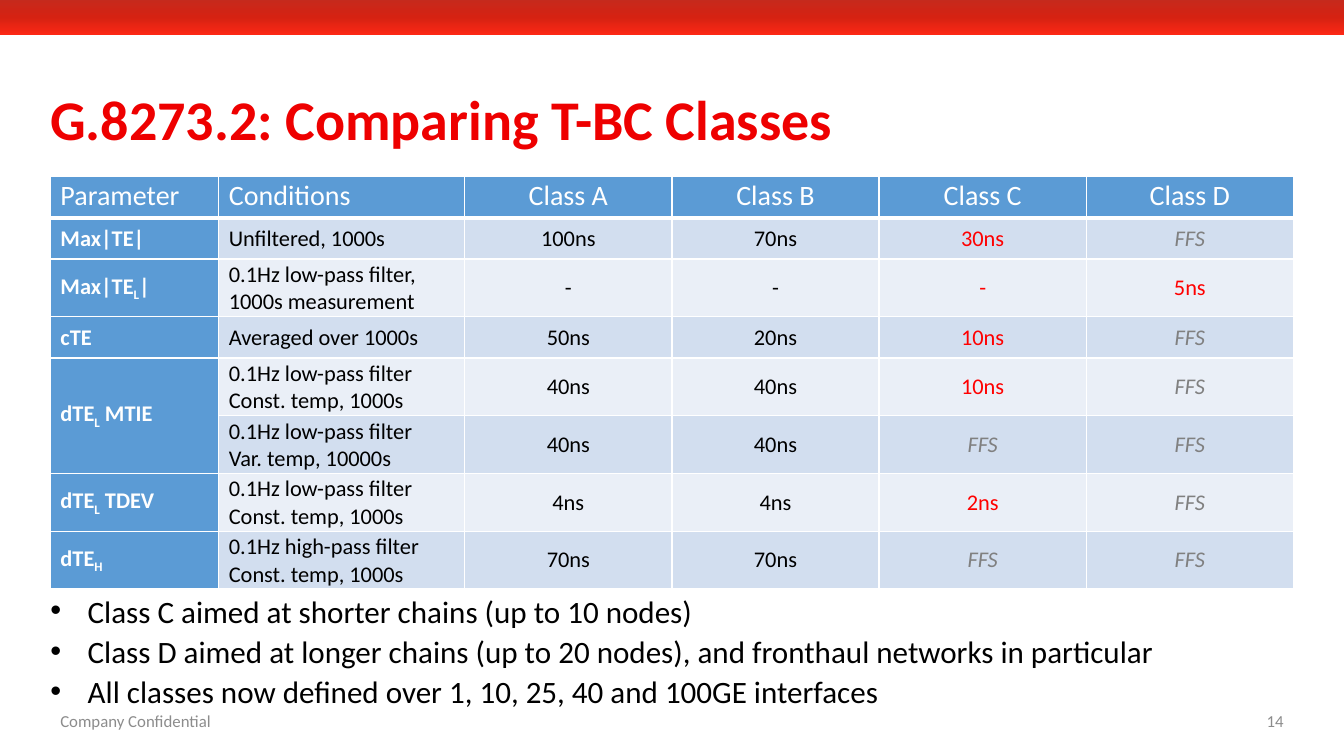
from pptx import Presentation
from pptx.dml.color import RGBColor
from pptx.enum.shapes import MSO_SHAPE
from pptx.enum.text import MSO_ANCHOR, PP_ALIGN
from pptx.oxml import parse_xml
from pptx.oxml.ns import nsdecls
from pptx.util import Inches, Pt

COLORS = {
    "title": "EE0000", "black": "000000", "white": "FFFFFF", "footer": "8C8C8C",
    "new": "FF0000", "pending": "808080", "header": "5B9BD5",
    "band_dark": "D2DEEF", "band_light": "EAEFF7",
    "bar_top": "C52A1D", "bar_middle": "D52212", "bar_bottom": "FD2815",
}
HEADINGS = ["Parameter", "Conditions", "Class A", "Class B", "Class C", "Class D"]
# Underscores enclose a subscript; None continues the parameter above.
LIMITS = [
    ["Max|TE|", "Unfiltered, 1000s", "100ns", "70ns", "30ns", "FFS"],
    ["Max|TE_L_|", "0.1Hz low-pass filter, 1000s measurement", "-", "-", "-", "5ns"],
    ["cTE", "Averaged over 1000s", "50ns", "20ns", "10ns", "FFS"],
    ["dTE_L_ MTIE", "0.1Hz low-pass filter\nConst. temp, 1000s", "40ns", "40ns", "10ns", "FFS"],
    [None, "0.1Hz low-pass filter\nVar. temp, 10000s", "40ns", "40ns", "FFS", "FFS"],
    ["dTE_L_ TDEV", "0.1Hz low-pass filter\nConst. temp, 1000s", "4ns", "4ns", "2ns", "FFS"],
    ["dTE_H_", "0.1Hz high-pass filter Const. temp, 1000s", "70ns", "70ns", "FFS", "FFS"],
]
COLUMN_WIDTHS = [1.67, 2.44] + [2.055] * 4
ROW_HEIGHT = 0.41
BULLETS = [
    "Class C aimed at shorter chains (up to 10 nodes)",
    "Class D aimed at longer chains (up to 20 nodes), and fronthaul networks in particular",
    "All classes now defined over 1, 10, 25, 40 and 100GE interfaces",
]


def add_span(para, text, size, color, bold=False, italic=False):
    span = para.add_run()
    span.text = text
    font = span.font
    font.name, font.size = "Calibri", Pt(size)
    font.bold, font.italic = bold, italic
    font.color.rgb = RGBColor.from_string(COLORS[color])
    return span


def add_box(page, left, top, width, height, inset=True, anchor=MSO_ANCHOR.MIDDLE):
    box = page.shapes.add_textbox(Inches(left), Inches(top), Inches(width), Inches(height))
    frame = box.text_frame
    frame.word_wrap = True
    frame.vertical_anchor = anchor
    if not inset:
        frame.margin_left = frame.margin_right = 0
        frame.margin_top = frame.margin_bottom = 0
    return frame


def add_top_bar(page):
    bar = page.shapes.add_shape(
        MSO_SHAPE.RECTANGLE, 0, Inches(-0.01), Inches(13.34), Inches(0.36))
    stops = "".join(
        f'<a:gs pos="{place}"><a:srgbClr val="{COLORS[name]}"/></a:gs>'
        for place, name in [(0, "bar_top"), (50000, "bar_middle"), (100000, "bar_bottom")])
    bar._element.spPr.append(parse_xml(
        f'<a:gradFill {nsdecls("a")} rotWithShape="1"><a:gsLst>{stops}</a:gsLst>'
        '<a:lin ang="5400000" scaled="0"/></a:gradFill>'))
    bar.line.fill.background()
    bar.shadow.inherit = False


def add_title(page, text):
    para = add_box(page, 0.5, 0.91, 9.73, 0.61, inset=False).paragraphs[0]
    para.line_spacing = 0.9
    add_span(para, text, 40, "title", bold=True)


def add_bullets(page, lines):
    frame = add_box(page, 0.5, 5.98, 12.33, 1.12, inset=False, anchor=MSO_ANCHOR.TOP)
    for index, line in enumerate(lines):
        para = frame.add_paragraph() if index else frame.paragraphs[0]
        properties = para._p.get_or_add_pPr()
        properties.set("marL", str(Inches(0.37)))
        properties.set("indent", str(Inches(-0.37)))
        properties.append(parse_xml(f'<a:buFont {nsdecls("a")} typeface="Arial"/>'))
        properties.append(parse_xml(f'<a:buChar {nsdecls("a")} char="•"/>'))
        para.line_spacing = 0.7
        if index:
            para.space_before = Pt(10)
        add_span(para, line, 22.2, "black")


def add_footer(page, left, text, align):
    para = add_box(page, left, 6.95, 3, 0.4).paragraphs[0]
    para.alignment = align
    add_span(para, text, 12, "footer")


def style_cell(cell, fill, bottom_width=1):
    """Set the margins, white borders and fill of a table cell."""
    cell.margin_left = cell.margin_right = Inches(0.1)
    cell.margin_top = cell.margin_bottom = Inches(0.02)
    properties = cell._tc.get_or_add_tcPr()
    for side, width in [("L", 1), ("R", 1), ("T", 1), ("B", bottom_width)]:
        properties.append(parse_xml(
            f'<a:ln{side} {nsdecls("a")} w="{Pt(width)}"><a:solidFill>'
            f'<a:srgbClr val="{COLORS["white"]}"/></a:solidFill></a:ln{side}>'))
    cell.fill.solid()
    cell.fill.fore_color.rgb = RGBColor.from_string(COLORS[fill])


def write_parameter(para, text):
    for index, part in enumerate(text.split("_")):
        if part:
            span = add_span(para, part, 16, "white", bold=True)
            if index % 2:
                span._r.get_or_add_rPr().set("baseline", "-25000")


def write_condition(para, text):
    for index, line in enumerate(text.split("\n")):
        if index:
            para.add_line_break()
        add_span(para, line, 16, "black")


def write_limit(para, text, is_new):
    pending = text == "FFS"
    color = "pending" if pending else "new" if is_new else "black"
    para.alignment = PP_ALIGN.CENTER
    add_span(para, text, 16, color, italic=pending)


def add_limits_table(page):
    row_count = len(LIMITS) + 1
    table = page.shapes.add_table(
        row_count, len(HEADINGS), Inches(0.5), Inches(1.75),
        Inches(12.33), Inches(ROW_HEIGHT * row_count)).table
    for column, width in zip(table.columns, COLUMN_WIDTHS):
        column.width = Inches(width)
    for row in table.rows:
        row.height = Inches(ROW_HEIGHT)

    for column, heading in enumerate(HEADINGS):
        cell = table.cell(0, column)
        style_cell(cell, "header", bottom_width=3)
        para = cell.text_frame.paragraphs[0]
        if column > 1:
            para.alignment = PP_ALIGN.CENTER
        add_span(para, heading, 20, "white")

    for row, values in enumerate(LIMITS, start=1):
        band = "band_dark" if row % 2 else "band_light"
        for column, value in enumerate(values):
            cell = table.cell(row, column)
            style_cell(cell, band if column else "header")
            cell.vertical_anchor = MSO_ANCHOR.MIDDLE
            para = cell.text_frame.paragraphs[0]
            if value is None:
                table.cell(row - 1, column).merge(cell)
            elif column == 0:
                write_parameter(para, value)
            elif column == 1:
                write_condition(para, value)
            else:
                write_limit(para, value, is_new=column > 3)


def main():
    deck = Presentation()
    deck.slide_width, deck.slide_height = Inches(13.33), Inches(7.5)
    page = deck.slides.add_slide(deck.slide_layouts[6])
    add_top_bar(page)
    add_title(page, "G.8273.2: Comparing T-BC Classes")
    add_bullets(page, BULLETS)
    add_footer(page, 0.5, "Company Confidential", PP_ALIGN.LEFT)
    add_limits_table(page)
    add_footer(page, 9.83, "14", PP_ALIGN.RIGHT)
    deck.save("out.pptx")


if __name__ == "__main__":
    main()
